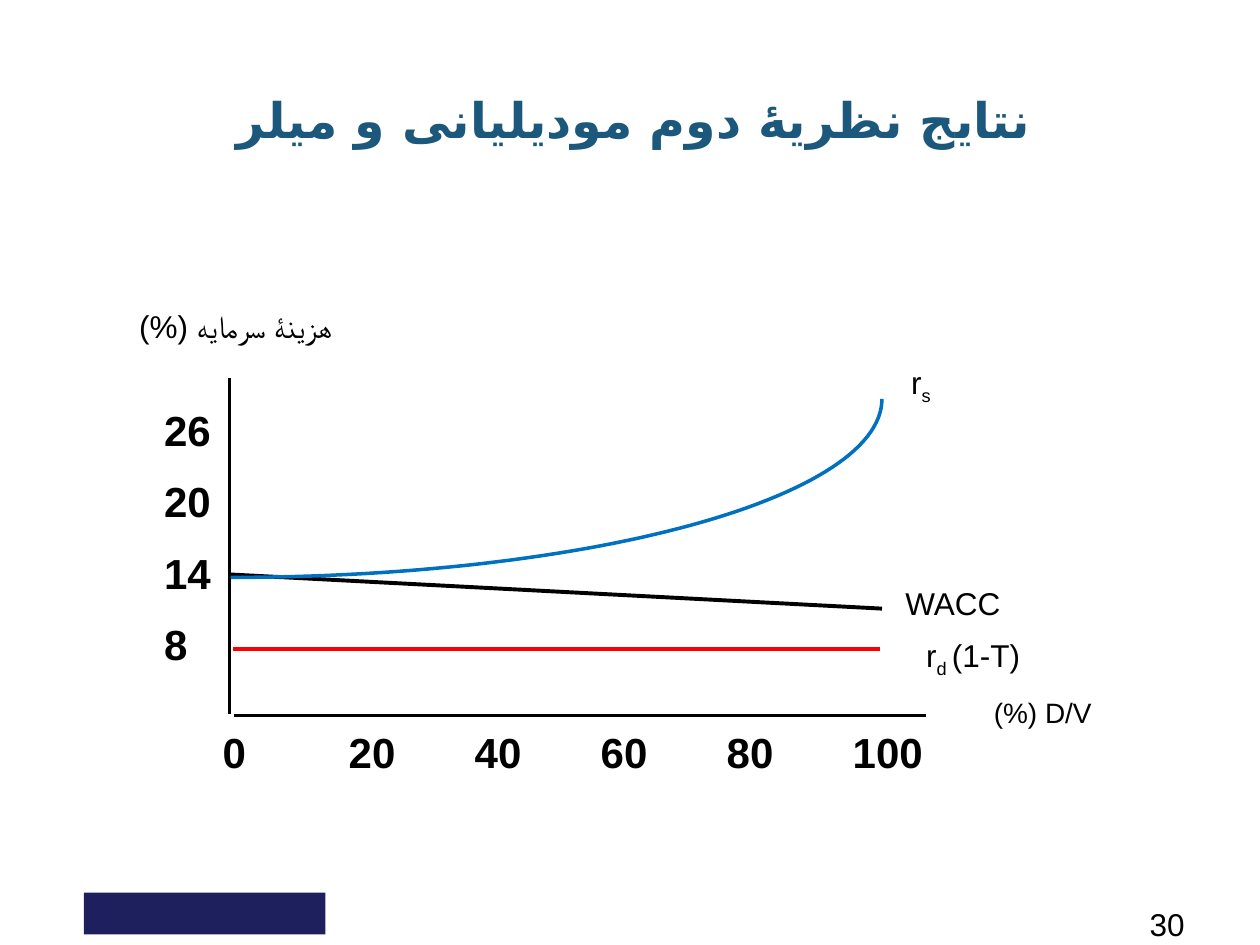
from math import cos, pi, sin

from pptx import Presentation
from pptx.dml.color import RGBColor
from pptx.enum.shapes import MSO_CONNECTOR as Connector, MSO_SHAPE as Shape
from pptx.enum.text import MSO_ANCHOR as Anchor, MSO_AUTO_SIZE as AutoSize, PP_ALIGN as Align
from pptx.oxml.ns import qn
from pptx.util import Pt

FONT = "Arial"
TITLE_SCRIPT_FONT = "DejaVu Sans"
BLACK = "000000"
NAVY = "1D205D"
TEAL = "1B587C"
RED = "FF0000"
BLUE = "0070C0"


def color(value):
    return RGBColor.from_string(value)


def place(shape, left, top, width, height):
    shape.left, shape.top = Pt(left), Pt(top)
    shape.width, shape.height = Pt(width), Pt(height)


def add_tabs(para, step, count):
    properties = para._p.get_or_add_pPr()
    tabs = properties.makeelement(qn("a:tabLst"), {})
    for index in range(1, count + 1):
        place_at = {"pos": str(Pt(step * index)), "algn": "l"}
        tabs.append(tabs.makeelement(qn("a:tab"), place_at))
    properties.append(tabs)


def format_para(para, size, bold=False, align=Align.LEFT, rtl=False, fill=BLACK,
                script_font=FONT):
    para.alignment = align
    if rtl:
        para._p.get_or_add_pPr().set("rtl", "1")
    for span in para.runs:
        span.font.name = FONT
        span.font.size = Pt(size)
        span.font.bold = bold
        span.font.color.rgb = color(fill)
        properties = span.font._element
        properties.append(properties.makeelement(qn("a:cs"), {"typeface": script_font}))


def add_title(page, text):
    title = page.shapes.title
    place(title, 56, 39.6, 612, 56.9)
    frame = title.text_frame
    frame.text = text
    frame.vertical_anchor = Anchor.MIDDLE
    format_para(frame.paragraphs[0], 28, True, Align.CENTER, True, TEAL, TITLE_SCRIPT_FONT)


def add_text(page, bounds, text, size, wrap=True, gap=0, spacing=None, **style):
    box = page.shapes.add_textbox(*map(Pt, bounds))
    frame = box.text_frame
    frame.word_wrap = wrap
    frame.auto_size = AutoSize.SHAPE_TO_FIT_TEXT
    frame.text = text
    for index, para in enumerate(frame.paragraphs):
        format_para(para, size, **style)
        if spacing:
            para.line_spacing = spacing
        if index and gap:
            para.space_before = Pt(gap)
    return box


def add_curve_label(page, bounds, parts):
    box = add_text(page, bounds, "", 18, wrap=False)
    para = box.text_frame.paragraphs[0]
    for text, lowered in parts:
        span = para.add_run()
        span.text = text
        if lowered:
            span.font._element.set("baseline", "-25000")
    format_para(para, 18, align=Align.RIGHT, rtl=True)


def add_line(page, start, end, width, stroke=BLACK):
    line = page.shapes.add_connector(Connector.STRAIGHT, *map(Pt, start + end))
    line.line.width = Pt(width)
    line.line.color.rgb = color(stroke)
    properties = line._element.spPr
    properties.append(properties.makeelement(qn("a:effectLst"), {}))


def add_equity_curve(page, left, top, width, height, steps=60):
    angles = [pi / 2 * step / steps for step in range(steps + 1)]
    points = [(Pt(left + width * sin(a)), Pt(top + height * cos(a))) for a in angles]
    builder = page.shapes.build_freeform(*points[0])
    builder.add_line_segments(points[1:], close=False)
    curve = builder.convert_to_shape()
    curve.shadow.inherit = False
    curve.fill.background()
    curve.line.color.rgb = color(BLUE)
    curve.line.width = Pt(2)


def add_footer(page):
    bar = page.shapes.add_shape(Shape.RECTANGLE, *map(Pt, (48, 510, 138, 24)))
    bar.shadow.inherit = False
    bar.fill.solid()
    bar.fill.fore_color.rgb = color(NAVY)
    bar.line.fill.background()
    add_text(page, (516, 513.4, 168, 19.4), "30", 18, align=Align.RIGHT, rtl=True)


def add_axes(page):
    add_line(page, (131.3, 216), (131.3, 408), 2)
    add_line(page, (134, 409), (529.2, 409), 2)
    add_text(page, (17.3, 174.2, 234.7, 26.6), "هزینۀ سرمایه (%)", 18,
             spacing=0.9, align=Align.CENTER, rtl=True)
    add_text(page, (504, 396, 183.6, 24.5), "D/V (%)", 16,
             spacing=0.9, align=Align.CENTER, rtl=True)
    ticks = add_text(page, (72, 227.5, 55.4, 167), "26\n20\n14\n8", 24, gap=12, bold=True)
    ticks.text_frame.margin_left = Pt(21.8)
    ticks.text_frame.margin_right = 0
    ratios = add_text(page, (120.2, 411.8, 575.3, 36), "0\t20\t40\t60\t80\t100", 24, bold=True)
    add_tabs(ratios.text_frame.paragraphs[0], 72, 5)


def add_curves(page):
    add_line(page, (133.2, 370.8), (502.6, 370.8), 2.25, RED)
    add_line(page, (131.8, 328.3), (504, 347.8), 2.25)
    add_equity_curve(page, 131.8, 228, 372.2, 102)
    add_curve_label(page, (512.4, 203.8, 26.6, 28.8), [("r", False), ("s", True)])
    add_curve_label(page, (509.6, 330.1, 69.1, 28.8), [("WACC", False)])
    add_curve_label(page, (520.2, 360, 69.8, 28.8),
                    [("r", False), ("d ", True), ("(1-T)", False)])


def main():
    deck = Presentation()
    deck.slide_width, deck.slide_height = Pt(720), Pt(540)
    page = deck.slides.add_slide(deck.slide_layouts[5])
    add_title(page, "نتایج نظریۀ دوم مودیلیانی و میلر")
    add_footer(page)
    add_axes(page)
    add_curves(page)
    deck.save("out.pptx")


if __name__ == "__main__":
    main()
